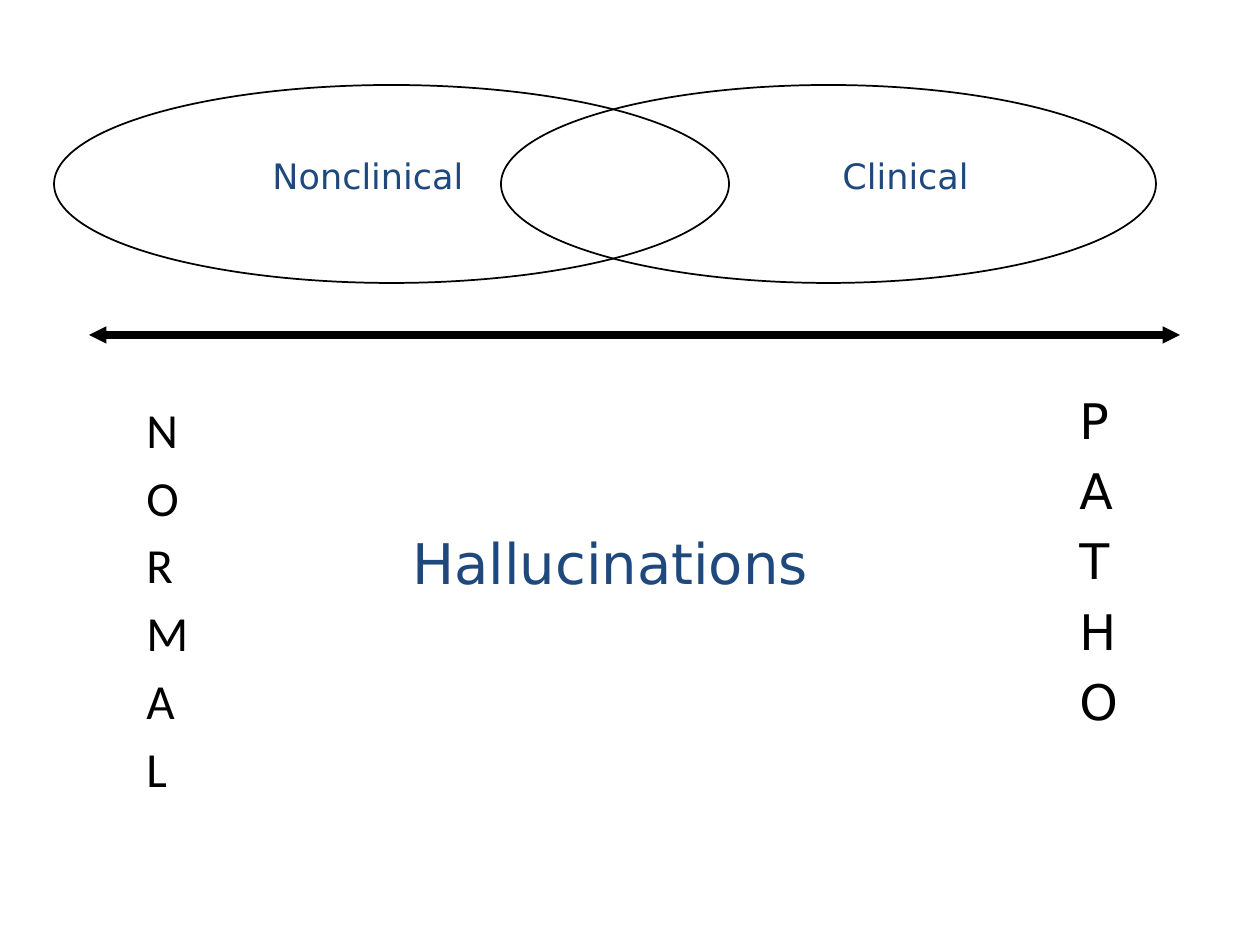
from dataclasses import dataclass

from lxml import etree
from pptx import Presentation
from pptx.dml.color import RGBColor
from pptx.enum.shapes import MSO_CONNECTOR, MSO_SHAPE
from pptx.enum.text import PP_ALIGN
from pptx.oxml.ns import qn
from pptx.util import Emu, Pt

LEFT, CENTER = PP_ALIGN.LEFT, PP_ALIGN.CENTER
OVAL = MSO_SHAPE.OVAL
STRAIGHT = MSO_CONNECTOR.STRAIGHT
PX_PER_INCH = 126
COLORS = {"ink": "000000", "navy": "1F497D"}


@dataclass(frozen=True)
class Label:
    lines: str
    left: int
    top: int
    width: int
    height: int
    size: int
    color: str
    font: str = "DejaVu Sans"
    align: PP_ALIGN = LEFT
    space_before: float = 0


@dataclass(frozen=True)
class Ellipse:
    left: int
    top: int
    width: int
    height: int


GROUPS = [Ellipse(54, 85, 675, 198), Ellipse(501, 85, 655, 198)]
LABELS = [
    Label("Nonclinical", 260, 148, 230, 79, 20, "navy"),
    Label("Clinical", 830, 148, 180, 79, 20, "navy"),
    Label("\n".join("NORMAL"), 134, 393, 89, 452, 28, "ink", "Calibri", space_before=5.2),
    Label("\n".join("PATHO"), 1067, 384, 89, 444, 28, "ink", space_before=6.6),
    Label("Hallucinations", 227, 522, 767, 79, 32, "navy", align=CENTER),
]


def px(length: int) -> Emu:
    return Emu(round(length * 914400 / PX_PER_INCH))


def color(name: str) -> RGBColor:
    return RGBColor.from_string(COLORS[name])


def add_ellipse(page, ellipse: Ellipse) -> None:
    shape = page.shapes.add_shape(
        OVAL, px(ellipse.left), px(ellipse.top), px(ellipse.width), px(ellipse.height)
    )
    shape.shadow.inherit = False
    shape.fill.background()
    shape.line.color.rgb = color("ink")
    shape.line.width = Pt(1)


def add_label(page, label: Label) -> None:
    box = page.shapes.add_textbox(
        px(label.left), px(label.top), px(label.width), px(label.height)
    )
    frame = box.text_frame
    frame.word_wrap = True
    frame.text = label.lines
    for para in frame.paragraphs:
        para.alignment = label.align
        para.space_before = Pt(label.space_before)
        para.font.name = label.font
        para.font.size = Pt(label.size)
        para.font.color.rgb = color(label.color)


def add_double_arrow(page, left: int, right: int, y: int) -> None:
    arrow = page.shapes.add_connector(STRAIGHT, px(left), px(y), px(right), px(y))
    arrow.line.color.rgb = color("ink")
    arrow.line.width = Pt(5)
    line = arrow.line._get_or_add_ln()
    for end in ("a:headEnd", "a:tailEnd"):
        etree.SubElement(line, qn(end), type="triangle", w="sm", len="sm")
    etree.SubElement(arrow._element.spPr, qn("a:effectLst"))


def main() -> None:
    deck = Presentation()
    deck.slide_width, deck.slide_height = px(1260), px(945)
    page = deck.slides.add_slide(deck.slide_layouts[6])
    add_double_arrow(page, 89, 1180, 335)
    for ellipse in GROUPS:
        add_ellipse(page, ellipse)
    for label in LABELS:
        add_label(page, label)
    deck.save("out.pptx")


if __name__ == "__main__":
    main()
